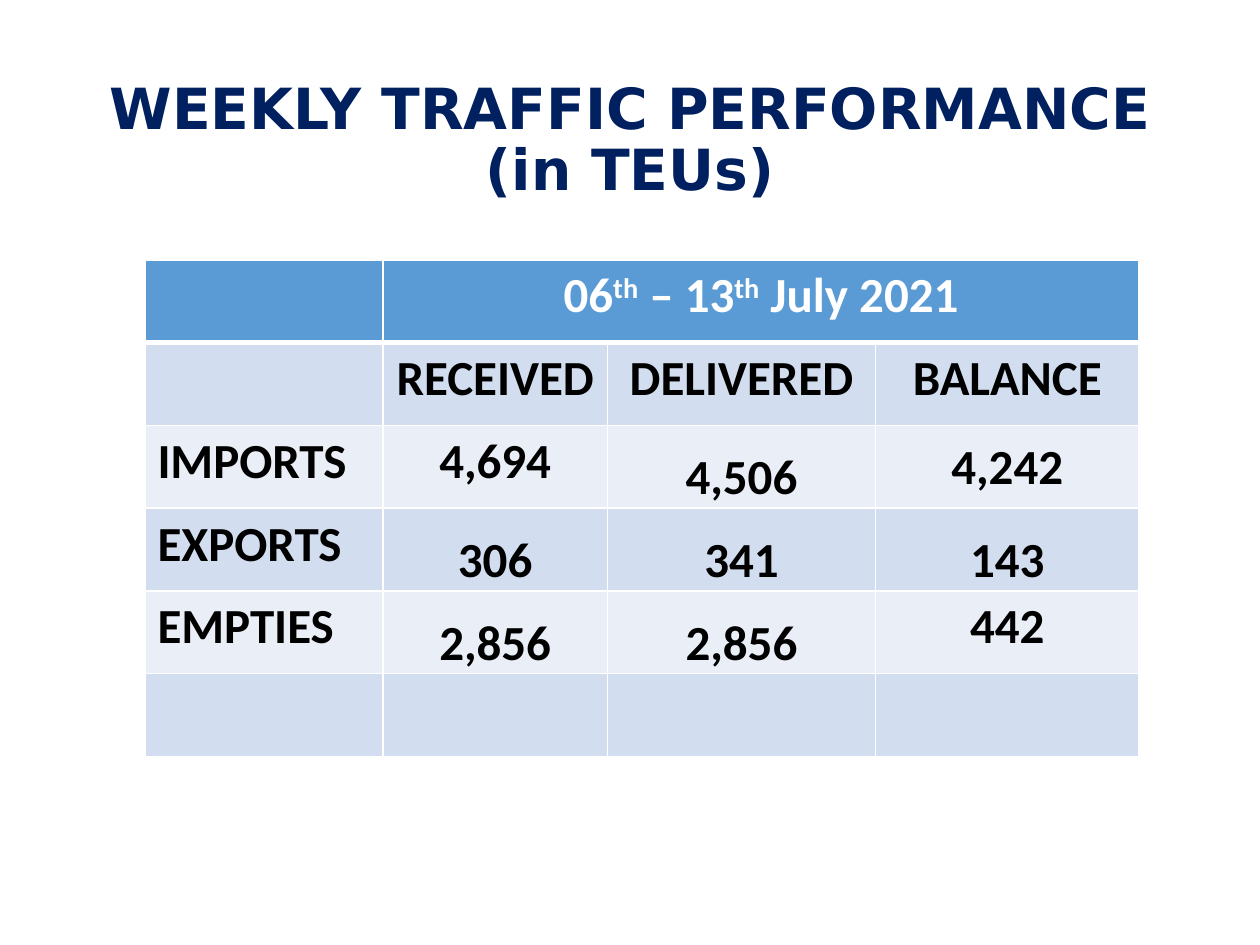
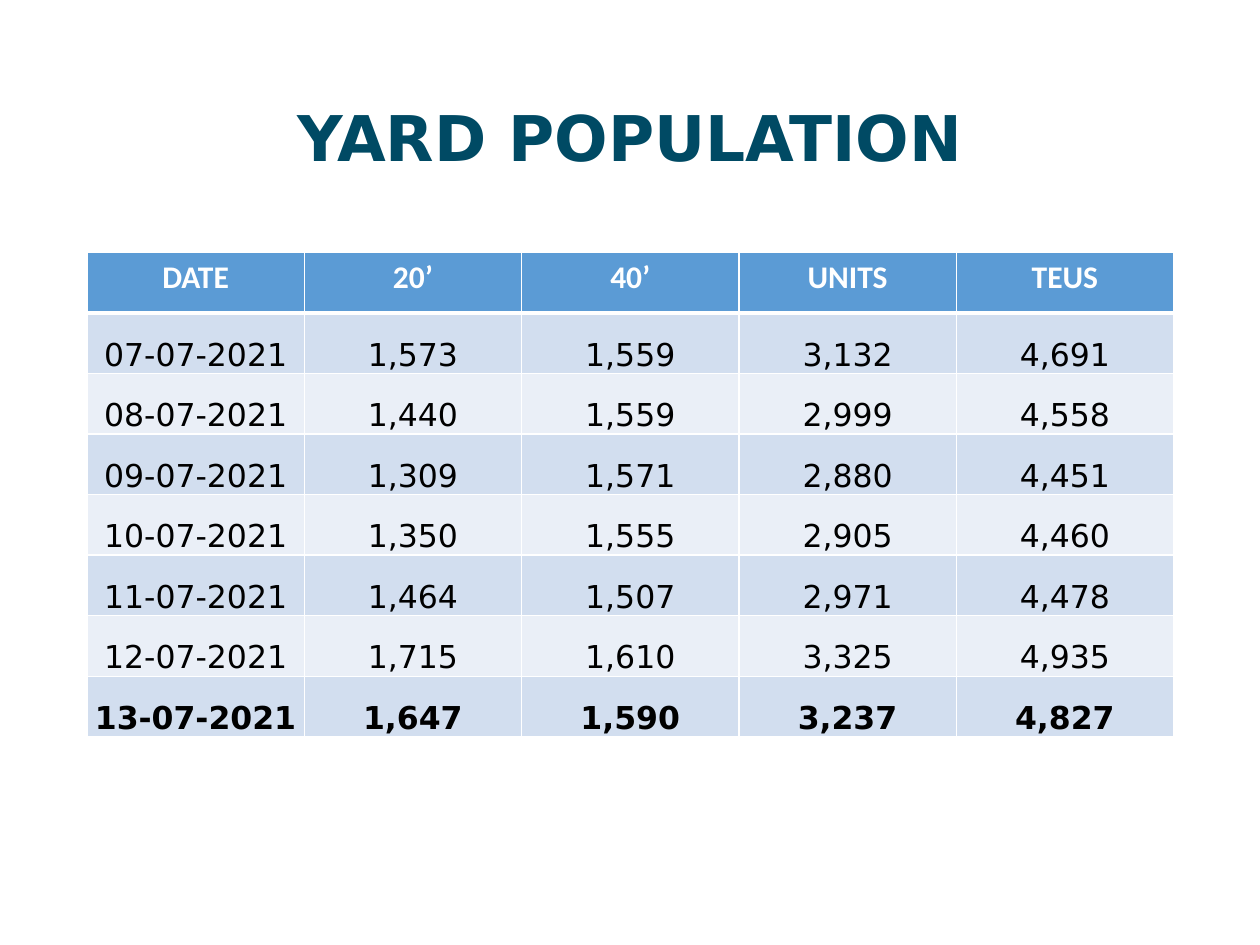
"""Build the weekly traffic and yard population slides."""
from itertools import product

from lxml.etree import SubElement
from pptx import Presentation
from pptx.dml.color import RGBColor
from pptx.enum.text import MSO_ANCHOR, MSO_AUTO_SIZE, PP_ALIGN
from pptx.oxml.ns import qn
from pptx.util import Inches, Pt

WIDTH, HEIGHT = Inches(10), Inches(7.5)
HEADER_FILL, BANDS = "5B9BD5", ("D2DEEF", "EAEFF7")
WHITE, BLACK = "FFFFFF", "000000"
TITLE_FONT, TABLE_FONT = "DejaVu Sans", "Calibri"
ANCHORS = {"t": MSO_ANCHOR.TOP, "m": MSO_ANCHOR.MIDDLE, "b": MSO_ANCHOR.BOTTOM}


def color(hex_code):
    return RGBColor.from_string(hex_code)


def add_span(para, text, size, font, hex_code, bold=True):
    span = para.add_run()
    span.text = text
    span.font.size, span.font.name, span.font.bold = Pt(size), font, bold
    span.font.color.rgb = color(hex_code)
    return span


traffic = {
    "title": ["WEEKLY TRAFFIC PERFORMANCE", "(in TEUs)"],
    "title_size": 32.4, "title_color": "002060",
    "left": 0.115, "top": 0.275, "row_height": 0.0876,
    "columns": [0.189, 0.178, 0.213, 0.209],
    "size": 28, "body_font": TABLE_FONT, "label_align": PP_ALIGN.LEFT,
    "bold_rows": range(6), "header_span": (1, 3),
    "rows": [
        ["", "06^th^ – 13^th^ July 2021", "", ""],
        ["", "RECEIVED", "DELIVERED", "BALANCE"],
        ["IMPORTS", "4,694", "4,506", "4,242"],
        ["EXPORTS", "306", "341", "143"],
        ["EMPTIES", "2,856", "2,856", "442"],
        ["", "", "", ""],
    ],
    "anchors": ["tttt", "tttt", "ttbm", "tbbb", "tbbt", "tttt"],
}
yard = {
    "title": ["YARD POPULATION"],
    "title_size": 36, "title_color": "004A64",
    "left": 0.069, "top": 0.267, "row_height": 0.0641,
    "columns": [0.1725] * 5,
    "size": 18, "body_font": TITLE_FONT, "label_align": PP_ALIGN.CENTER,
    "bold_rows": (0, 7), "header_span": None,
    "rows": [
        ["DATE", "20’", "40’", "UNITS", "TEUS"],
        ["07-07-2021", "1,573", "1,559", "3,132", "4,691"],
        ["08-07-2021", "1,440", "1,559", "2,999", "4,558"],
        ["09-07-2021", "1,309", "1,571", "2,880", "4,451"],
        ["10-07-2021", "1,350", "1,555", "2,905", "4,460"],
        ["11-07-2021", "1,464", "1,507", "2,971", "4,478"],
        ["12-07-2021", "1,715", "1,610", "3,325", "4,935"],
        ["13-07-2021", "1,647", "1,590", "3,237", "4,827"],
    ],
    "anchors": ["ttttt"] + ["bbbbb"] * 7,
}

deck = Presentation()
deck.slide_width, deck.slide_height = WIDTH, HEIGHT

for report in (traffic, yard):
    page = deck.slides.add_slide(deck.slide_layouts[5])
    title = page.shapes.title
    title.left, title.top = int(WIDTH * 0.069), int(HEIGHT * 0.053)
    title.width, title.height = int(WIDTH * 0.862), int(HEIGHT * 0.193)
    box = title.text_frame
    box.word_wrap, box.auto_size = True, MSO_AUTO_SIZE.NONE
    box.vertical_anchor = MSO_ANCHOR.MIDDLE
    para = box.paragraphs[0]
    para.alignment, para.line_spacing = PP_ALIGN.CENTER, 0.9
    for number, line in enumerate(report["title"]):
        if number:
            para.add_line_break()
        add_span(para, line, report["title_size"], TITLE_FONT, report["title_color"])

    rows, columns = report["rows"], report["columns"]
    row_height = int(HEIGHT * report["row_height"])
    table = page.shapes.add_table(
        len(rows), len(columns), int(WIDTH * report["left"]), int(HEIGHT * report["top"]),
        int(WIDTH * sum(columns)), row_height * len(rows)).table
    for column, share in zip(table.columns, columns):
        column.width = int(WIDTH * share)
    for row in table.rows:
        row.height = row_height
    if report["header_span"]:
        first, last = report["header_span"]
        table.cell(0, first).merge(table.cell(0, last))

    for r, c in product(range(len(rows)), range(len(columns))):
        cell = table.cell(r, c)
        anchor = report["anchors"][r][c]
        cell.vertical_anchor = ANCHORS[anchor]
        if anchor != "t":
            cell.margin_left = cell.margin_right = cell.margin_top = Inches(0.01)
            cell.margin_bottom = 0
        properties = cell._tc.get_or_add_tcPr()
        for side in "LRTB":
            thick = (r, side) in ((0, "B"), (1, "T"))
            border = SubElement(properties, qn(f"a:ln{side}"), w=str(Pt(3 if thick else 1)))
            SubElement(SubElement(border, qn("a:solidFill")), qn("a:srgbClr"), val=WHITE)
        cell.fill.solid()
        cell.fill.fore_color.rgb = color(BANDS[(r - 1) % 2] if r else HEADER_FILL)
        if not rows[r][c]:
            continue
        para = cell.text_frame.paragraphs[0]
        para.alignment = PP_ALIGN.CENTER if c else report["label_align"]
        for number, piece in enumerate(rows[r][c].split("^")):
            span = add_span(para, piece, report["size"],
                            report["body_font"] if r else TABLE_FONT,
                            BLACK if r else WHITE, r in report["bold_rows"])
            if number % 2:
                span.font._element.set("baseline", "30000")

deck.save("out.pptx")
